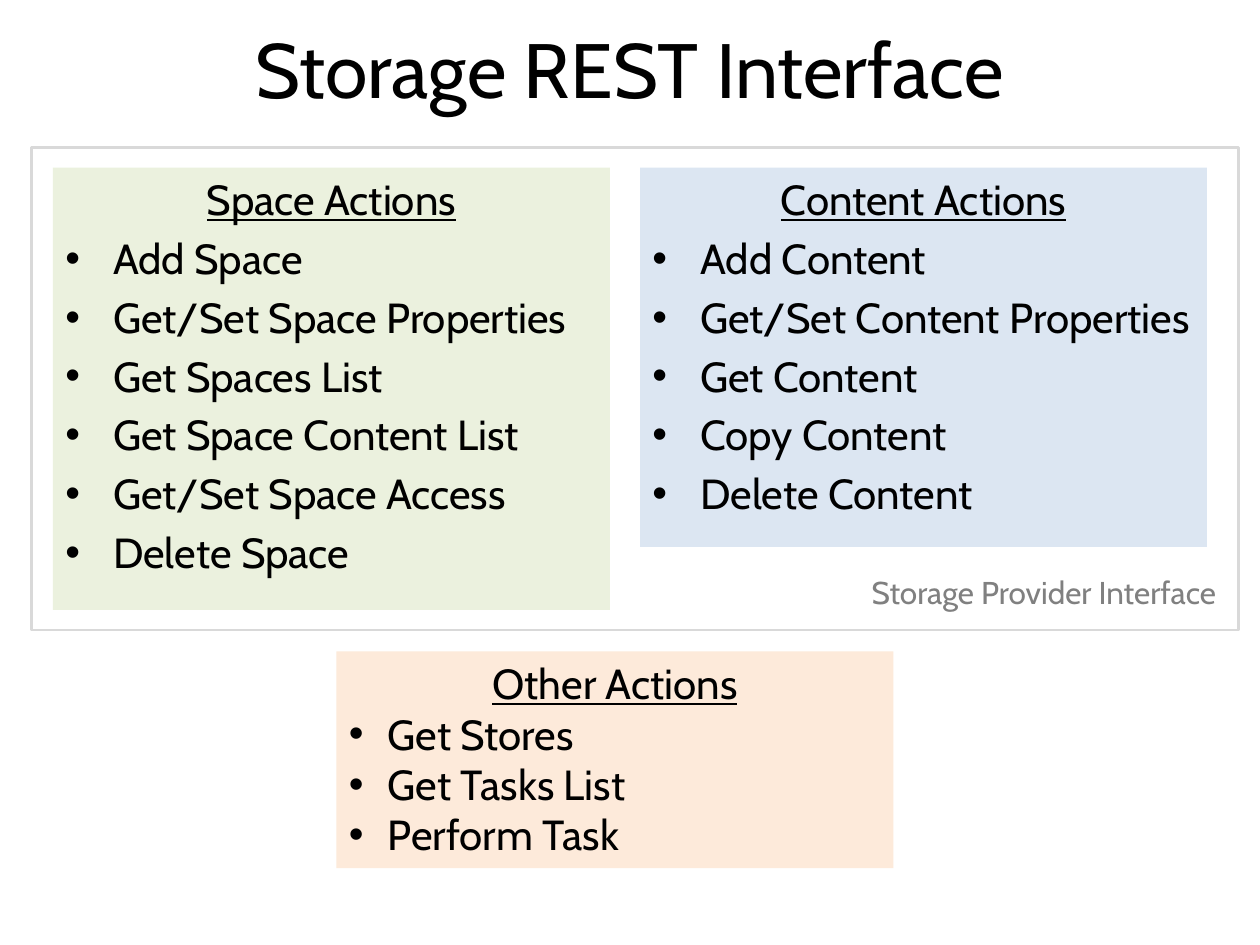
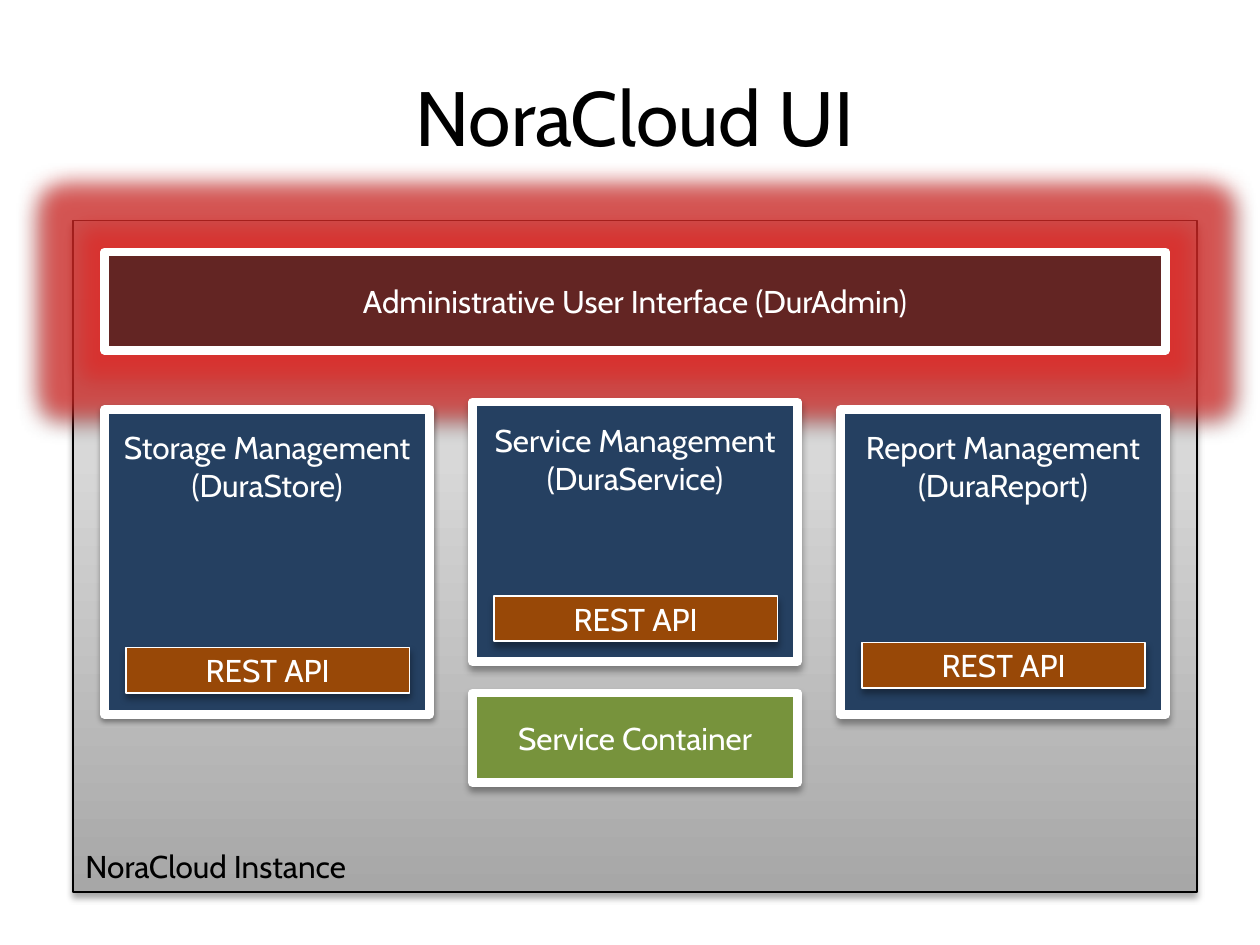
from dataclasses import dataclass

from lxml import etree
from pptx import Presentation
from pptx.dml.color import RGBColor
from pptx.enum.shapes import MSO_SHAPE
from pptx.enum.text import MSO_ANCHOR, PP_ALIGN
from pptx.oxml.ns import qn
from pptx.util import Inches, Pt

RECT = MSO_SHAPE.RECTANGLE
TOP, MIDDLE = MSO_ANCHOR.TOP, MSO_ANCHOR.MIDDLE
LEFT, CENTER, RIGHT = PP_ALIGN.LEFT, PP_ALIGN.CENTER, PP_ALIGN.RIGHT


@dataclass(frozen=True)
class Theme:
    """Colours, font, type sizes and shadow styles of the deck."""
    font: str = "Cabin"
    title: int = 44
    body: int = 24
    label: int = 18
    black: str = "000000"
    white: str = "FFFFFF"
    grey: str = "808080"
    frame: str = "D9D9D9"
    pale_green: str = "EBF1DE"
    pale_blue: str = "DCE6F2"
    pale_orange: str = "FDEADA"
    maroon: str = "632523"
    navy: str = "254061"
    green: str = "77933C"
    rust: str = "984807"
    glow: str = "DF2A27"
    metal: tuple = ((0, "A7A7A7"), (65, "D8D8D8"), (100, "E4E4E4"))
    deep: tuple = (35, 4, 3)
    soft: tuple = (38, 3.1, 1.6)


T = Theme()


def node(parent, tag, **attrs):
    """Append a DrawingML element to parent."""
    return etree.SubElement(parent, qn(f"a:{tag}"), {k: str(v) for k, v in attrs.items()})


def add_color(parent, color, alpha=None):
    """Append an RGB colour with an optional opacity in percent."""
    clr = node(parent, "srgbClr", val=color)
    if alpha is not None:
        node(clr, "alpha", val=alpha * 1000)


def write(tf, text, size=T.label, color=T.black, align=LEFT, underline=False,
          indent=None, before=0):
    """Add one formatted paragraph to a text frame."""
    p = tf.paragraphs[0] if not tf.text else tf.add_paragraph()
    p.alignment = align
    if before:
        p.space_before = Pt(before)
    if indent:
        pPr = p._p.get_or_add_pPr()
        pPr.set("marL", str(Inches(indent)))
        pPr.set("indent", str(-Inches(indent)))
        node(pPr, "buFont", typeface="Arial")
        node(pPr, "buChar", char="•")
    r = p.add_run()
    r.text = text
    r.font.name, r.font.size = T.font, Pt(size)
    r.font.color.rgb = RGBColor.from_string(color)
    if underline:
        r.font.underline = True


def add_rect(slide, box, fill=None, line=None, width=1.0, shadow=None, glow=None, anchor=MIDDLE):
    """Draw a rectangle with optional outline, glow and shadow."""
    sp = slide.shapes.add_shape(RECT, *map(Inches, box))
    sp.shadow.inherit = False
    if fill:
        sp.fill.solid()
        sp.fill.fore_color.rgb = RGBColor.from_string(fill)
    if line:
        sp.line.color.rgb = RGBColor.from_string(line)
        sp.line.width = Pt(width)
    else:
        sp.line.fill.background()
    effects = sp._element.spPr.find(qn("a:effectLst"))
    if glow:
        add_color(node(effects, "glow", rad=Pt(24)), glow, 70)
    if shadow:
        alpha, blur, dist = shadow
        outer = node(effects, "outerShdw", blurRad=Pt(blur), dist=Pt(dist),
                     dir=5400000, rotWithShape=0)
        add_color(outer, T.black, alpha)
    sp.text_frame.word_wrap = True
    sp.text_frame.vertical_anchor = anchor
    return sp


def add_label(slide, box, text, anchor=TOP, **fmt):
    """Place a wrapped text box."""
    tf = slide.shapes.add_textbox(*map(Inches, box)).text_frame
    tf.word_wrap = True
    tf.vertical_anchor = anchor
    write(tf, text, **fmt)


def add_title(slide, box, text):
    """Place the slide title."""
    add_label(slide, box, text, anchor=MIDDLE, size=T.title, align=CENTER)


def action_panel(slide, box, fill, heading, actions, indent=0.38, before=4.8):
    """Draw a tinted panel with an underlined heading and bullets."""
    tf = add_rect(slide, box, fill, anchor=TOP).text_frame
    write(tf, heading, size=T.body, align=CENTER, underline=True)
    for action in actions:
        write(tf, action, size=T.body, indent=indent, before=before)


def block(slide, box, fill, text, width=5.0, shadow=T.deep, glow=None, inset=None):
    """Draw a white-edged block, its text centred or set from the top."""
    sp = add_rect(slide, box, fill, T.white, width, shadow, glow,
                  MIDDLE if inset is None else TOP)
    if inset is not None:
        sp.text_frame.margin_top = Inches(inset)
    write(sp.text_frame, text, color=T.white, align=CENTER)


def manager(slide, box, text, api_top, shadow=T.deep):
    """Draw a management block holding its REST API bar."""
    x, y, w, _ = box
    block(slide, box, T.navy, text, shadow=shadow, inset=0.15)
    block(slide, (x + 0.17, y + api_top, w - 0.33, 0.36), T.rust, "REST API", width=1)


def provider_interface(slide, box):
    """Draw the frame with the space and content panels."""
    x, y, w, h = box
    add_rect(slide, box, T.white, T.frame, 1.5)
    action_panel(slide, (x + 0.17, y + 0.16, 4.42, 3.51), T.pale_green, "Space Actions",
                 ["Add Space", "Get/Set Space Properties", "Get Spaces List",
                  "Get Space Content List", "Get/Set Space Access", "Delete Space"])
    action_panel(slide, (x + 4.83, y + 0.16, 4.5, 3.01), T.pale_blue, "Content Actions",
                 ["Add Content", "Get/Set Content Properties", "Get Content",
                  "Copy Content", "Delete Content"])
    add_label(slide, (x + w - 3.16, y + h - 0.5, 3.08, 0.4), "Storage Provider Interface",
              color=T.grey, align=RIGHT)


def instance(slide, box):
    """Draw the instance backdrop with its management blocks."""
    x, y, w, h = box
    backdrop = add_rect(slide, box, line=T.black, width=0.75, shadow=T.deep)
    backdrop.fill.gradient()
    backdrop.fill.gradient_angle = 90
    stops = backdrop._element.spPr.find(f".//{qn('a:gsLst')}")
    for stop in list(stops):
        stops.remove(stop)
    for pos, color in T.metal:
        add_color(node(stops, "gs", pos=pos * 1000), color)

    block(slide, (x + 0.25, y + 0.25, w - 0.5, 0.78), T.maroon,
          "Administrative User Interface (DurAdmin)", shadow=T.soft, glow=T.glow)
    managers = [("Storage Management (DuraStore)", 1.5, 2.42, 1.89, T.soft),
                ("Service Management (DuraService)", 1.44, 2.06, 1.54, T.deep),
                ("Report Management (DuraReport)", 1.5, 2.42, 1.85, T.deep)]
    columns = [x + 0.25 + 2.92 * i for i in range(len(managers))]
    for left, (text, top, height, api_top, shadow) in zip(columns, managers):
        manager(slide, (left, y + top, 2.58, height), text, api_top, shadow)
    block(slide, (columns[1], y + 3.75, 2.58, 0.71), T.green, "Service Container")
    add_label(slide, (x, y + h - 0.41, 2.42, 0.42), "NoraCloud Instance")


def storage_slide(slide):
    """Build the storage interface slide."""
    add_title(slide, (0.5, 0, 9, 1.08), "Storage REST Interface")
    provider_interface(slide, (0.25, 1.17, 9.58, 3.83))
    action_panel(slide, (2.67, 5.17, 4.42, 1.72), T.pale_orange, "Other Actions",
                 ["Get Stores", "Get Tasks List", "Perform Task"], indent=0.31, before=0)


def ui_slide(slide):
    """Build the user interface slide."""
    add_title(slide, (0.5, 0.29, 9.08, 1.25), "NoraCloud UI")
    instance(slide, (0.58, 1.75, 8.92, 5.33))


def main():
    """Build and save the deck."""
    prs = Presentation()
    prs.slide_width, prs.slide_height = Inches(10), Inches(7.5)
    for build in (storage_slide, ui_slide):
        build(prs.slides.add_slide(prs.slide_layouts[6]))
    prs.save("out.pptx")


if __name__ == "__main__":
    main()
